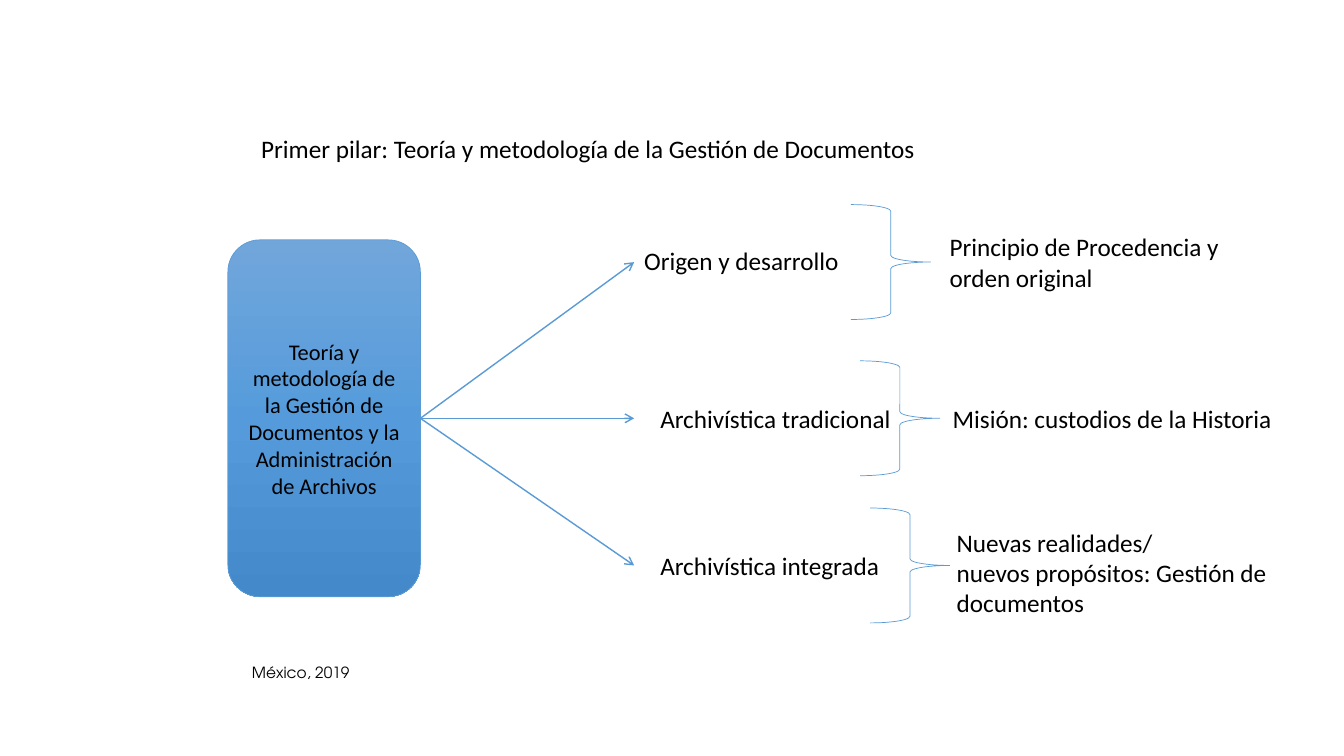
from copy import deepcopy
from dataclasses import dataclass

from pptx import Presentation
from pptx.dml import color as dml
from pptx.enum import shapes, text
from pptx.oxml import ns, xmlchemy
from pptx.util import Inches, Pt

COLORS = {
    "ink": "000000",
    "line": "5B9BD5",
    "top": "71A6DB",
    "middle": "559BDB",
    "bottom": "448ACA",
}
HUB_RIGHT, HUB_CENTER = 4.17, 4.15
ARROW_END = 6.29
BRACE_WIDTH, BRACE_HEIGHT = 0.79, 1.14


@dataclass
class Label:
    content: str
    left: float
    top: float
    width: float
    height: float = 0.4
    size: float = 18
    font: str = "Calibri"
    margin_top: float = 0.05


@dataclass
class Branch:
    center: float
    topic: Label
    brace_left: float
    outcome: Label


BRANCHES = [
    Branch(2.6, Label("Origen y desarrollo", 6.29, 2.38, 2.16), 8.44,
           Label("Principio de Procedencia y\norden original", 9.32, 2.25, 2.96, 0.71)),
    Branch(4.15, Label("Archivística tradicional", 6.45, 3.95, 2.52), 8.53,
           Label("Misión: custodios de la Historia", 9.35, 3.95, 3.4)),
    Branch(5.61, Label("Archivística integrada", 6.45, 5.41, 2.41), 8.63,
           Label("Nuevas realidades/\nnuevos propósitos: Gestión de\ndocumentos",
                 9.39, 5.18, 3.37, 1.01)),
]
HEADING = Label("Primer pilar: Teoría y metodología de la Gestión de Documentos",
                2.49, 1.27, 6.76)
HUB = Label("Teoría y metodología de la Gestión de Documentos y la Administración de Archivos",
            2.26, 2.38, 1.91, 3.54, 16)
PLACE = Label("México, 2019", 2.4, 6.35, 1.18, 0.77, 11, "TeX Gyre Adventor", 0.23)


def rgb(name: str) -> dml.RGBColor:
    """Return a named palette colour."""
    return dml.RGBColor.from_string(COLORS[name])


def box(label: Label) -> tuple:
    """Return the position and size of a label."""
    return tuple(map(Inches, (label.left, label.top, label.width, label.height)))


def write(shape, label: Label, align=text.PP_ALIGN.LEFT,
          anchor=text.MSO_ANCHOR.TOP, wrap: bool = False) -> None:
    """Write and format a label inside a shape."""
    frame = shape.text_frame
    frame.text = label.content
    frame.word_wrap = wrap
    frame.auto_size = text.MSO_AUTO_SIZE.NONE
    frame.vertical_anchor = anchor
    frame.margin_top = Inches(label.margin_top)
    for paragraph in frame.paragraphs:
        paragraph.alignment = align
        paragraph.line_spacing = 1.0
        paragraph.space_before = Pt(0)
        for run in paragraph.runs:
            run.font.size = Pt(label.size)
            run.font.name = label.font
            run.font.color.rgb = rgb("ink")


def add_label(slide, label: Label) -> None:
    """Add a text box for a label."""
    write(slide.shapes.add_textbox(*box(label)), label)


def outline(shape, width: float) -> None:
    """Give a shape the common line colour."""
    shape.line.color.rgb = rgb("line")
    shape.line.width = Pt(width)


def add_heading(slide) -> None:
    """Move and fill the title placeholder."""
    heading = slide.shapes.title
    heading.left, heading.top, heading.width, heading.height = box(HEADING)
    write(heading, HEADING)


def add_hub(slide) -> None:
    """Add the rounded box with its vertical gradient."""
    hub = slide.shapes.add_shape(shapes.MSO_SHAPE.ROUNDED_RECTANGLE, *box(HUB))
    hub.shadow.inherit = False
    hub.fill.gradient()
    hub.fill.gradient_angle = 270
    stop_list = hub._element.spPr.find(".//" + ns.qn("a:gsLst"))
    stop_list.insert(1, deepcopy(stop_list[0]))
    for stop, name, position in zip(hub.fill.gradient_stops,
                                    ("top", "middle", "bottom"), (0, 0.5, 1)):
        stop.color.rgb = rgb(name)
        stop.position = position
    outline(hub, 0.5)
    write(hub, HUB, text.PP_ALIGN.CENTER, text.MSO_ANCHOR.MIDDLE, True)


def add_arrow(slide, center: float) -> None:
    """Draw an open arrow from the hub to a branch."""
    arrow = slide.shapes.add_connector(
        shapes.MSO_CONNECTOR.STRAIGHT,
        *map(Inches, (HUB_RIGHT, HUB_CENTER, ARROW_END, center)))
    outline(arrow, 1)
    head = xmlchemy.OxmlElement("a:tailEnd")
    head.set("type", "arrow")
    arrow.line._get_or_add_ln().append(head)
    arrow._element.spPr.append(xmlchemy.OxmlElement("a:effectLst"))


def add_branch(slide, branch: Branch) -> None:
    """Draw one arrow, topic, brace and outcome."""
    add_arrow(slide, branch.center)
    add_label(slide, branch.topic)
    brace = slide.shapes.add_shape(
        shapes.MSO_SHAPE.RIGHT_BRACE,
        *map(Inches, (branch.brace_left, branch.center - BRACE_HEIGHT / 2,
                      BRACE_WIDTH, BRACE_HEIGHT)))
    brace.shadow.inherit = False
    brace.fill.background()
    outline(brace, 0.5)
    add_label(slide, branch.outcome)


def main() -> None:
    """Build and save the slide."""
    deck = Presentation()
    deck.slide_width, deck.slide_height = Inches(13.33), Inches(7.5)
    slide = deck.slides.add_slide(deck.slide_layouts.get_by_name("Title Only"))
    add_heading(slide)
    add_hub(slide)
    for branch in BRANCHES:
        add_branch(slide, branch)
    add_label(slide, PLACE)
    deck.save("out.pptx")


if __name__ == "__main__":
    main()
